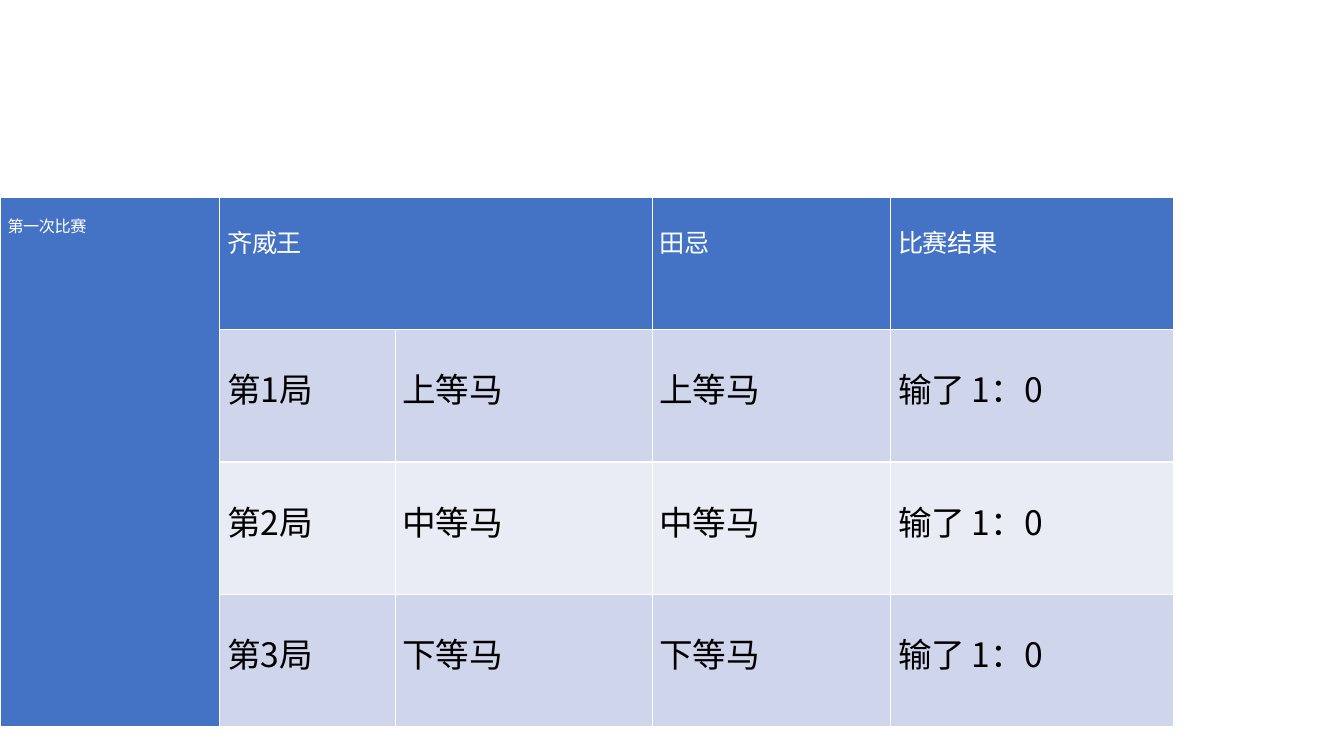
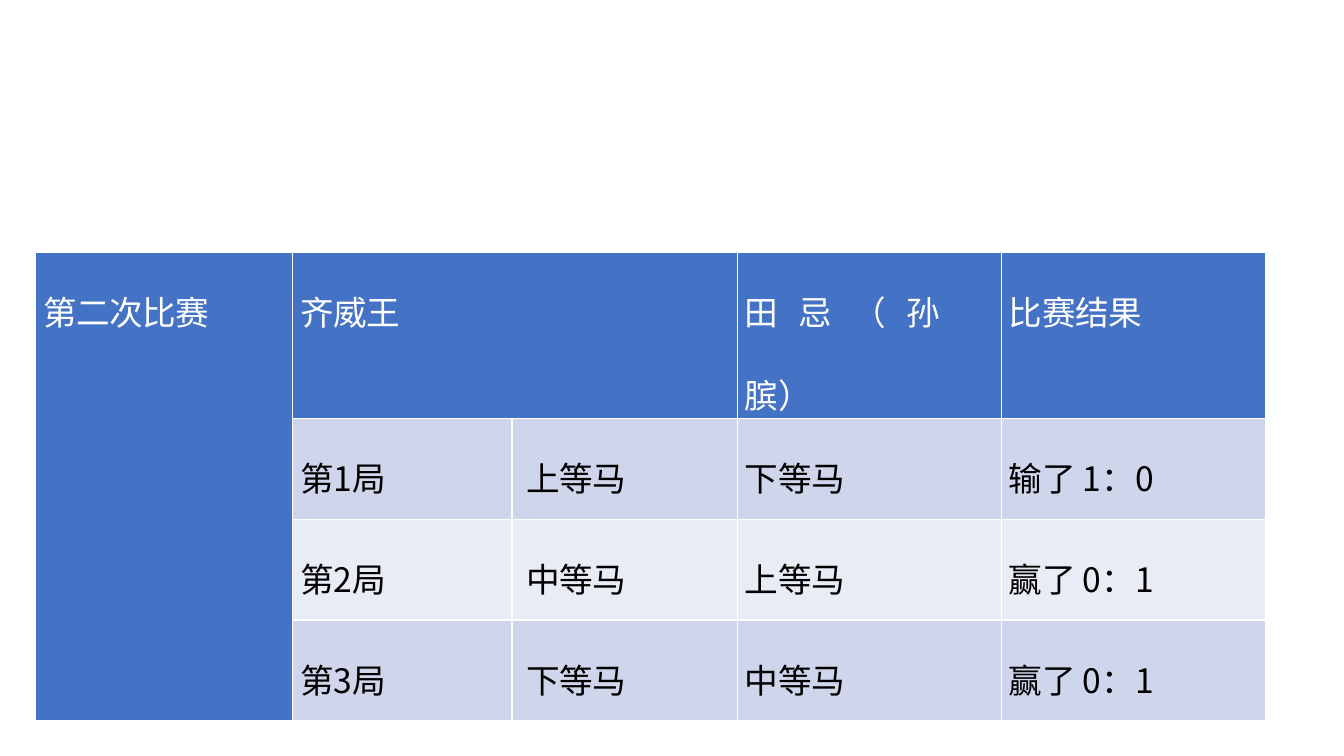
"""Build two slides with the results of the horse races as tables."""
from dataclasses import dataclass

from lxml import etree
from pptx import Presentation
from pptx import util as u
from pptx.dml import color
from pptx.enum import text
from pptx.oxml import ns

FONT = "Noto Sans CJK SC"
WHITE, BLACK, BLUE = "FFFFFF", "000000", "4472C4"
BANDS = ("CFD5EA", "E9EBF5")
BODY_SIZE = 24
TIGHT, SPREAD = -0.3, 14.4
KING_HORSES = ("上等马", "中等马", "下等马")


@dataclass(frozen=True)
class Race:
    name: str
    rival: str
    rival_horses: tuple[str, ...]
    results: tuple[str, ...]
    left: float
    top: float
    columns: tuple[float, ...]
    row_height: float
    name_size: float
    header_size: float
    king_indent: float


RACES = (
    Race("第一次比赛", "田忌", KING_HORSES, ("输了 1：0",) * 3,
         0, 141.1, (157, 125.3, 183.6, 170.2, 202), 94.5, 11.5, 18, 0),
    Race("第二次比赛", "田忌（孙\v膑）", ("下等马", "上等马", "中等马"),
         ("输了 1：0", "赢了 0：1", "赢了 0：1"),
         25.5, 180.5, (183.6, 156.6, 161, 188.6, 188.6), 72, 24, 24, 5),
)


def rgb(value: str) -> color.RGBColor:
    return color.RGBColor.from_string(value)


def add_borders(cell) -> None:
    properties = cell._tc.get_or_add_tcPr()
    for side in "LRTB":
        line = etree.SubElement(properties, ns.qn(f"a:ln{side}"), w=str(u.Pt(1)))
        fill = etree.SubElement(line, ns.qn("a:solidFill"))
        etree.SubElement(fill, ns.qn("a:srgbClr"), val=WHITE)


def format_span(span, size: float, ink: str, spacing: float) -> None:
    span.font.size = u.Pt(size)
    span.font.color.rgb = rgb(ink)
    span.font.name = FONT
    properties = span._r.get_or_add_rPr()
    properties.set("lang", "zh-CN")
    properties.set("spc", str(round(spacing * 100)))
    etree.SubElement(properties, ns.qn("a:ea"), typeface=FONT)


def write_cell(cell, words: str, size: float, ink: str, fill: str,
               indent: float = 0) -> None:
    add_borders(cell)
    cell.fill.solid()
    cell.fill.fore_color.rgb = rgb(fill)
    cell.margin_left = cell.margin_right = u.Pt(5.4)
    cell.margin_top = cell.margin_bottom = u.Pt(0)
    para = cell.text_frame.paragraphs[0]
    para.text = words
    broken = len(para.runs) > 1
    para.alignment = text.PP_ALIGN.LEFT if broken else text.PP_ALIGN.JUSTIFY
    para.line_spacing = 1.7
    para.space_before = u.Pt(5.8)
    if indent:
        para._p.get_or_add_pPr().set("marL", str(u.Pt(indent)))
    for span in para.runs[:-1]:
        format_span(span, size, ink, SPREAD)
    format_span(para.runs[-1], size, ink, TIGHT)


def add_race(page, race: Race) -> None:
    row_count = len(KING_HORSES) + 1
    table = page.shapes.add_table(
        row_count, len(race.columns), u.Pt(race.left), u.Pt(race.top),
        u.Pt(sum(race.columns)), u.Pt(race.row_height * row_count)).table
    table.first_row = table.horz_banding = False
    for column, width in zip(table.columns, race.columns):
        column.width = u.Pt(width)
    for row in table.rows:
        row.height = u.Pt(race.row_height)
    table.cell(0, 0).merge(table.cell(row_count - 1, 0))
    table.cell(0, 1).merge(table.cell(0, 2))

    write_cell(table.cell(0, 0), race.name, race.name_size, WHITE, BLUE)
    for column, title in ((1, "齐威王"), (3, race.rival), (4, "比赛结果")):
        write_cell(table.cell(0, column), title, race.header_size, WHITE, BLUE)

    rounds = zip(KING_HORSES, race.rival_horses, race.results)
    for number, entries in enumerate(rounds, start=1):
        band = BANDS[(number - 1) % 2]
        for column, words in enumerate((f"第{number}局", *entries), start=1):
            write_cell(table.cell(number, column), words, BODY_SIZE, BLACK, band,
                       indent=race.king_indent if column == 2 else 0)


def main() -> None:
    deck = Presentation()
    deck.slide_width, deck.slide_height = u.Pt(960), u.Pt(540)
    for race in RACES:
        add_race(deck.slides.add_slide(deck.slide_layouts[6]), race)
    deck.save("out.pptx")


if __name__ == "__main__":
    main()
